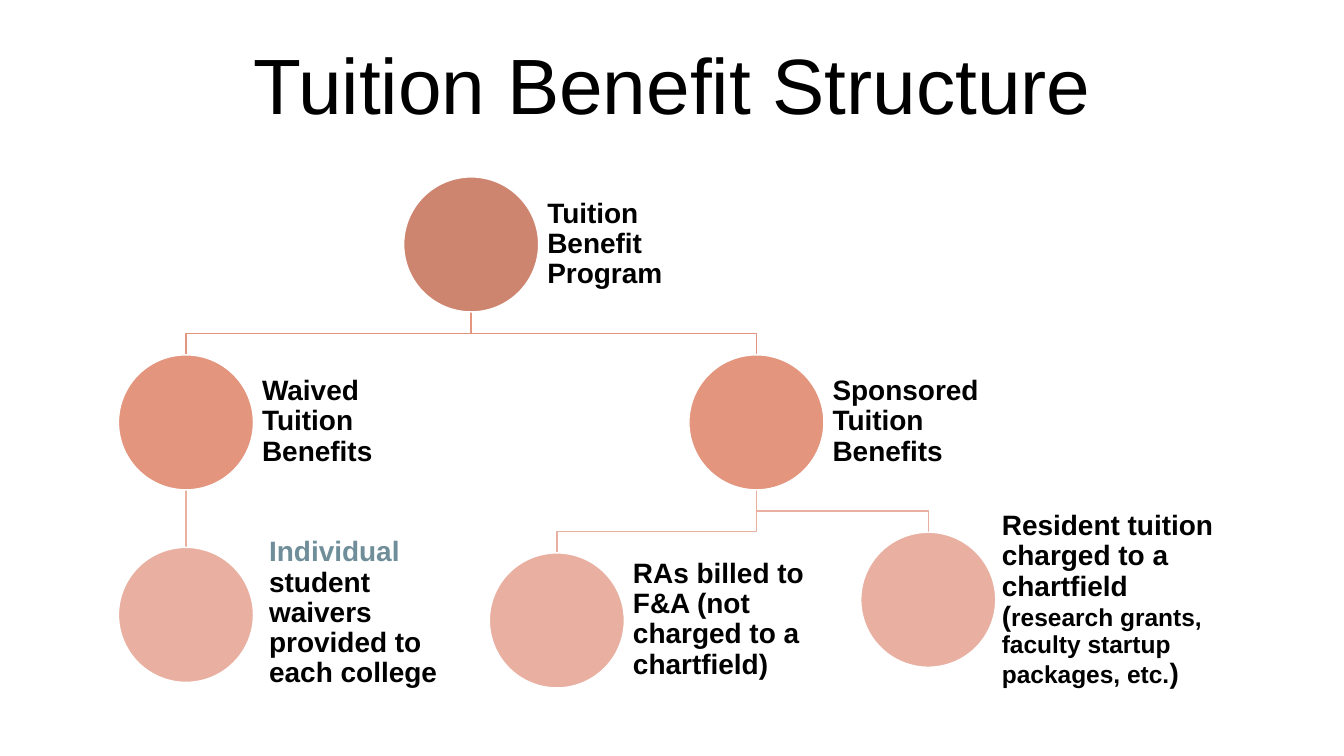
from dataclasses import dataclass
from typing import Optional

import pptx
import pptx.dml.color
import pptx.enum.shapes
import pptx.enum.text
import pptx.oxml
import pptx.util
from pptx.util import Inches


@dataclass(frozen=True)
class Theme:
    font: str = "Arial"
    ink: str = "000000"
    accent: str = "708E99"
    outline: str = "FFFFFF"
    levels: tuple = ("CE8570", "E3957D", "E9B0A1")
    title_size: int = 112
    label_size: int = 40
    detail_size: int = 35
    line_width: int = 2


@dataclass(frozen=True)
class Run:
    text: str
    size: int
    color: str


@dataclass(frozen=True)
class Node:
    level: int
    left: float
    top: float
    runs: tuple
    label: tuple  # left, top, width, height
    parent: Optional["Node"] = None

    @property
    def center(self) -> float:
        return self.left + DIAMETER / 2

    @property
    def bottom(self) -> float:
        return self.top + DIAMETER


THEME = Theme()
DIAMETER = 2.68
DROP = 0.42  # from the bend of a branch down to its child
LABEL_INSET = 0.17
TITLE_INSET = 0.06


def rgb(value: str) -> pptx.dml.color.RGBColor:
    return pptx.dml.color.RGBColor.from_string(value)


def apply(target, values: dict) -> None:
    for name, value in values.items():
        setattr(target, name, value)


def label(text: str, size: int = THEME.label_size, color: str = THEME.ink) -> Run:
    return Run(text, size, color)


def format_frame(tf, inset: float) -> None:
    sides = ("left", "top", "right", "bottom")
    apply(tf, {f"margin_{side}": Inches(inset) for side in sides})
    apply(tf, {"word_wrap": True,
               "auto_size": pptx.enum.text.MSO_AUTO_SIZE.NONE,
               "vertical_anchor": pptx.enum.text.MSO_ANCHOR.MIDDLE})


def add_run(p, run: Run, bold: bool) -> None:
    r = p.add_run()
    r.text = run.text
    apply(r.font, {"name": THEME.font, "size": pptx.util.Pt(run.size), "bold": bold})
    r.font.color.rgb = rgb(run.color)


def format_line(line, color: str) -> None:
    line.color.rgb = rgb(color)
    line.width = pptx.util.Pt(THEME.line_width)


def draw_title(s, text: str) -> None:
    sp = s.shapes.title
    apply(sp, {"left": Inches(1.85), "top": Inches(0.39),
               "width": Inches(22.97), "height": Inches(2.5)})
    format_frame(sp.text_frame, TITLE_INSET)
    p = sp.text_frame.paragraphs[0]
    p.alignment = pptx.enum.text.PP_ALIGN.CENTER
    add_run(p, Run(text, THEME.title_size, THEME.ink), False)


def draw_branch(s, node: Node) -> None:
    start, end = node.parent.center, node.center
    top, bottom = node.parent.bottom, node.top
    if start == end:
        sp = s.shapes.add_connector(pptx.enum.shapes.MSO_CONNECTOR.STRAIGHT,
                                    Inches(start), Inches(top), Inches(end), Inches(bottom))
        sp._element.spPr.append(pptx.oxml.parse_xml(
            '<a:effectLst xmlns:a="http://schemas.openxmlformats.org/drawingml/2006/main"/>'))
    else:
        bend = bottom - DROP
        points = [(start, bend), (end, bend), (end, bottom)]
        fb = s.shapes.build_freeform(Inches(start), Inches(top))
        fb.add_line_segments([(Inches(x), Inches(y)) for x, y in points], close=False)
        sp = fb.convert_to_shape()
        sp.fill.background()
        sp.shadow.inherit = False
    format_line(sp.line, THEME.levels[node.level])


def draw_node(s, node: Node) -> None:
    sp = s.shapes.add_shape(pptx.enum.shapes.MSO_SHAPE.OVAL, Inches(node.left),
                            Inches(node.top), Inches(DIAMETER), Inches(DIAMETER))
    sp.shadow.inherit = False
    sp.fill.solid()
    sp.fill.fore_color.rgb = rgb(THEME.levels[node.level])
    format_line(sp.line, THEME.outline)

    tf = s.shapes.add_textbox(*map(Inches, node.label)).text_frame
    format_frame(tf, LABEL_INSET)
    p = tf.paragraphs[0]
    p.line_spacing = 0.9
    for run in node.runs:
        add_run(p, run, True)


def build_tree() -> list[Node]:
    program = Node(0, 8.01, 3.51, (label("Tuition Benefit Program"),),
                   (10.69, 3.51, 4.02, 2.68))
    waived = Node(1, 2.35, 7.04, (label("Waived Tuition Benefits"),),
                  (5.03, 7.03, 4.02, 2.68), program)
    sponsored = Node(1, 13.67, 7.04, (label("Sponsored Tuition Benefits"),),
                     (16.35, 7.03, 4.02, 2.68), program)
    individual = Node(2, 2.35, 10.86,
                      (label("Individual", color=THEME.accent),
                       label(" student waivers provided to each college")),
                      (5.17, 10.53, 4.02, 3.28), waived)
    assistants = Node(2, 9.71, 10.97,
                      (label("RAs billed to F&A (not charged to a chartfield)"),),
                      (12.39, 10.55, 4.02, 3.49), sponsored)
    resident = Node(2, 17.08, 10.56,
                    (label("Resident tuition charged to a chartfield ("),
                     label("research grants, faculty startup packages, etc.",
                           THEME.detail_size),
                     label(")")),
                    (19.71, 10.57, 5.11, 2.68), sponsored)
    return [program, waived, individual, sponsored, assistants, resident]


def main() -> None:
    prs = pptx.Presentation()
    apply(prs, {"slide_width": Inches(26.67), "slide_height": Inches(15)})
    s = prs.slides.add_slide(prs.slide_layouts.get_by_name("Title Only"))
    draw_title(s, "Tuition Benefit Structure")

    # Branches lie behind the circles, deepest level first
    nodes = build_tree()
    for node in sorted(nodes, key=lambda n: -n.level):
        if node.parent:
            draw_branch(s, node)

    # Circles with their labels
    for node in nodes:
        draw_node(s, node)
    prs.save("out.pptx")


if __name__ == "__main__":
    main()
